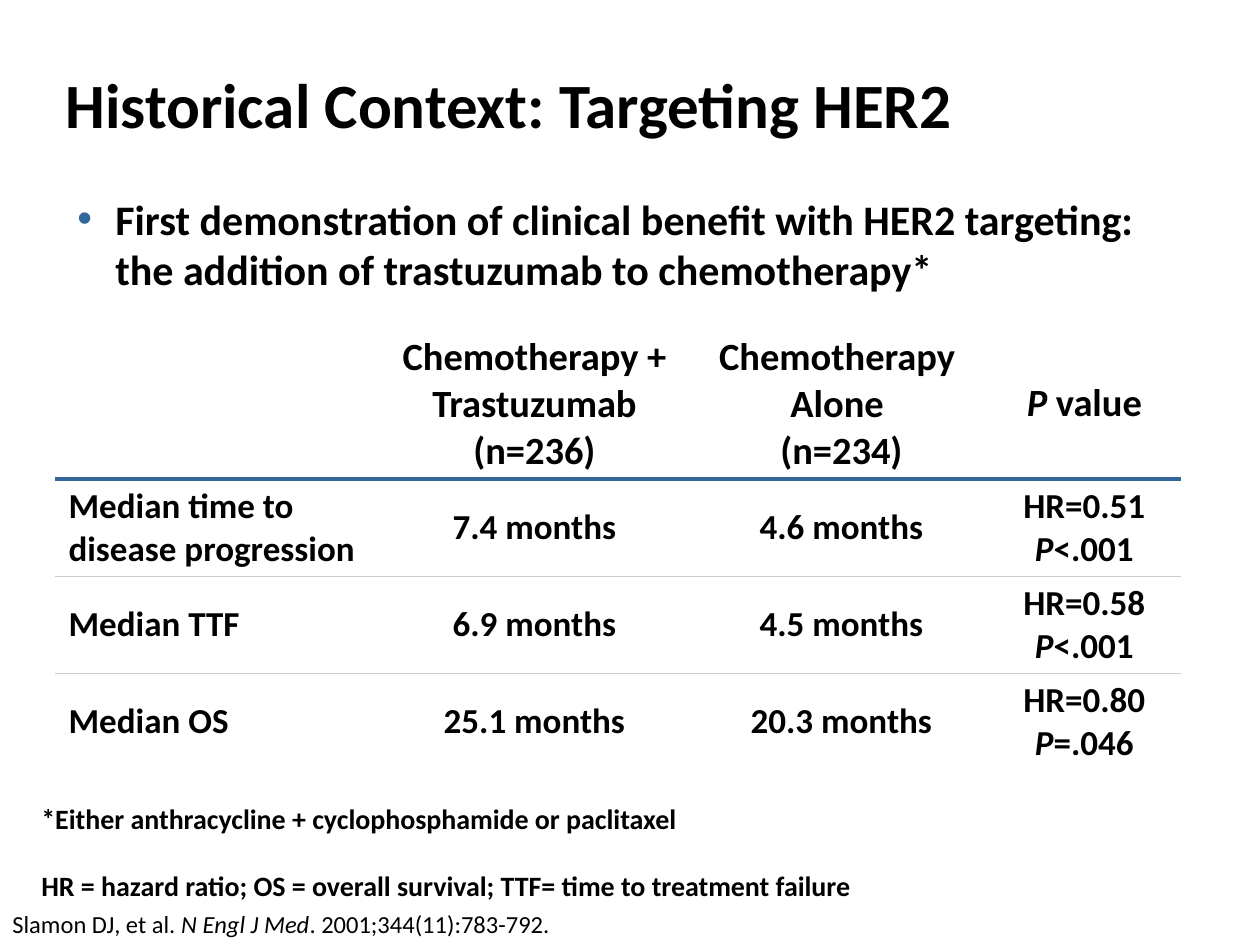
from lxml.etree import SubElement
from pptx import Presentation
from pptx.dml.color import RGBColor
from pptx.enum.text import MSO_ANCHOR as ANCHOR, MSO_AUTO_SIZE as AUTO, PP_ALIGN as ALIGN
from pptx.oxml.ns import qn
from pptx.util import Emu, Pt

COLORS = {"text": "000000", "accent": "336699", "rule": "CCCCCC"}
PX = 914400 / 126


def add_runs(p, runs, size, bold=True):
    """Add (text, italic) runs; a newline in the text is a line break."""
    for text, italic in runs:
        for i, line in enumerate(text.split("\n")):
            if i:
                p.add_line_break()
            r = p.add_run()
            r.text = line
            r.font.name, r.font.size = "Calibri", Pt(size)
            r.font.bold, r.font.italic = bold, italic
            r.font.color.rgb = RGBColor.from_string(COLORS["text"])


def add_border(cell, side, color, width):
    ln = SubElement(cell._tc.get_or_add_tcPr(), qn(f"a:{side}"), w=str(Pt(width)))
    fill = SubElement(ln, qn("a:solidFill"))
    SubElement(fill, qn("a:srgbClr"), val=COLORS[color])


prs = Presentation()
prs.slide_width, prs.slide_height = Emu(round(1260 * PX)), Emu(round(945 * PX))
s = prs.slides.add_slide(prs.slide_layouts[5])

# Title
title = s.shapes.title
title.left, title.top, title.width, title.height = [Emu(round(v * PX)) for v in (53, 38, 1144, 130)]
tf = title.text_frame
tf.vertical_anchor = ANCHOR.MIDDLE
p = tf.paragraphs[0]
p.alignment = ALIGN.LEFT
add_runs(p, [("Historical Context: Targeting HER2", False)], 36)

# Text boxes: box in px, size, bold, wrap, paragraphs of runs
texts = [
    ((53, 187, 1144, 111), 24, True, True,
     [[("First demonstration of clinical benefit with HER2 targeting: "
        "the addition of trastuzumab to chemotherapy*", False)]]),
    ((0, 903, 567, 43), 14, False, False,
     [[("Slamon DJ, et al. ", False), ("N Engl J Med", True),
       (". 2001;344(11):783-792.", False)]]),
    ((29, 795, 845, 115), 16, True, False,
     [[("*Either anthracycline + cyclophosphamide or paclitaxel", False)],
      [("HR = hazard ratio; OS = overall survival; TTF= time to treatment failure", False)]]),
]
boxes = []
for box, size, bold, wrap, paragraphs in texts:
    sp = s.shapes.add_textbox(*[Emu(round(v * PX)) for v in box])
    tf = sp.text_frame
    tf.word_wrap = wrap
    tf.auto_size = AUTO.NONE if wrap else AUTO.SHAPE_TO_FIT_TEXT
    for i, runs in enumerate(paragraphs):
        p = tf.add_paragraph() if i else tf.paragraphs[0]
        if i:
            p.space_before = Pt(19.5)
        add_runs(p, runs, size, bold)
    boxes.append(sp)

# Bullet of the key statement
pPr = boxes[0].text_frame.paragraphs[0]._p.get_or_add_pPr()
pPr.set("marL", str(round(50 * PX)))
pPr.set("indent", str(round(-38 * PX)))
SubElement(SubElement(pPr, qn("a:buClr")), qn("a:srgbClr"), val=COLORS["accent"])
SubElement(pPr, qn("a:buFont"), typeface="Arial")
SubElement(pPr, qn("a:buChar"), char="•")

# Results table: each cell is a list of paragraphs, each a list of runs
header = [
    [],
    [[("Chemotherapy + Trastuzumab", False)], [("(n=236)", False)]],
    [[("Chemotherapy \nAlone \n(n=234)", False)]],
    [[("P", True), (" value", False)]],
]
results = [
    ("Median time to disease progression", "7.4 months", "4.6 months", "HR=0.51", "<.001"),
    ("Median TTF", "6.9 months", "4.5 months", "HR=0.58", "<.001"),
    ("Median OS", "25.1 months", "20.3 months", "HR=0.80", "=.046"),
]
rows = [header]
for *plain, hr, p_value in results:
    rows.append([[[(text, False)]] for text in plain]
                + [[[(hr, False)], [("P", True), (p_value, False)]]])

col_widths, row_heights = (319, 319, 295, 191), (150, 97, 97, 97)
frame = s.shapes.add_table(4, 4, *[Emu(round(v * PX)) for v in
                                   (56, 328, sum(col_widths), sum(row_heights))])
table = frame.table
table.first_row = table.horz_banding = False
for col, width in zip(table.columns, col_widths):
    col.width = Emu(round(width * PX))
for row, height in zip(table.rows, row_heights):
    row.height = Emu(round(height * PX))

rules = [("accent", 2.25), ("rule", 0.75), ("rule", 0.75)]
for r_no, row in enumerate(rows):
    for c_no, paragraphs in enumerate(row):
        cell = table.cell(r_no, c_no)
        cell.vertical_anchor = ANCHOR.MIDDLE
        if r_no > 0:
            add_border(cell, "lnT", *rules[r_no - 1])
        if r_no < len(rules):
            add_border(cell, "lnB", *rules[r_no])
        cell.fill.background()
        for i, runs in enumerate(paragraphs):
            p = cell.text_frame.add_paragraph() if i else cell.text_frame.paragraphs[0]
            p.alignment = ALIGN.CENTER if c_no else ALIGN.LEFT
            add_runs(p, runs, 20 if r_no else 22)

prs.save("out.pptx")
